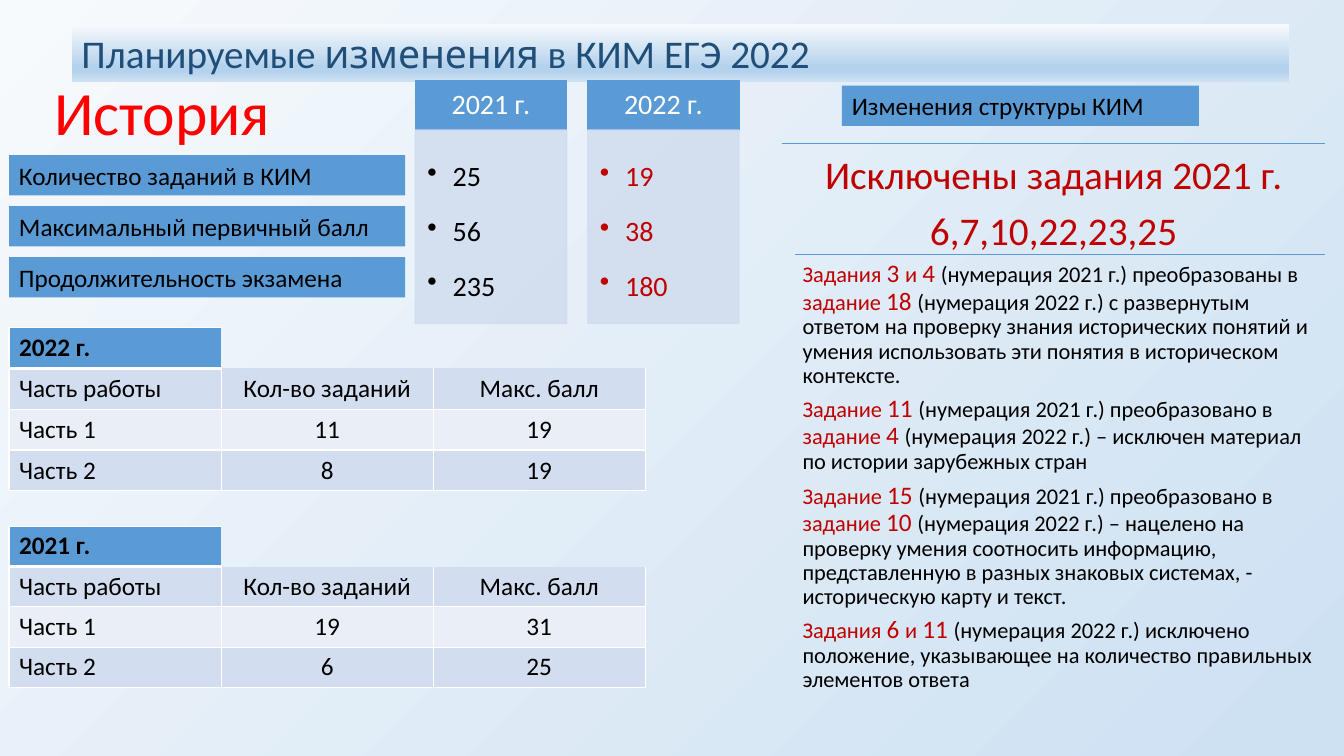
"""Build the slide on planned changes to the 2022 history exam."""
from copy import deepcopy

from lxml import etree
from pptx import Presentation
from pptx.dml.color import RGBColor
from pptx.enum.shapes import MSO_CONNECTOR, MSO_SHAPE
from pptx.enum.text import MSO_ANCHOR, PP_ALIGN
from pptx.oxml.ns import qn
from pptx.util import Inches, Pt

RECT = MSO_SHAPE.RECTANGLE
STRAIGHT = MSO_CONNECTOR.STRAIGHT
TOP, MIDDLE = MSO_ANCHOR.TOP, MSO_ANCHOR.MIDDLE
LEFT, CENTER = PP_ALIGN.LEFT, PP_ALIGN.CENTER

COLORS = {name: RGBColor.from_string(code) for name, code in {
    "pale": "F7FAFD", "sky": "CEE1F2", "haze": "B5D2EC", "blue": "5B9BD5",
    "panel": "D2DEEF", "band": "EAEFF7", "navy": "1F4E79", "red": "FF0000",
    "crimson": "C00000", "black": "000000", "white": "FFFFFF"}.items()}
CELL = Inches(0.1)

deck = Presentation()
deck.slide_width, deck.slide_height = Inches(13.33), Inches(7.5)
slide = deck.slides.add_slide(deck.slide_layouts[6])


def paint_gradient(fill, owner, stops, angle):
    fill.gradient()
    fill.gradient_angle = angle
    stop_list = next(owner.iter(qn("a:gsLst")))
    for _ in stops[2:]:
        stop_list.append(deepcopy(stop_list[0]))
    for stop, (position, color) in zip(fill.gradient_stops, stops):
        stop.position = position
        stop.color.rgb = COLORS[color]


def add_block(area, lines, size, fill=None, anchor=TOP, margins=(1, 0.5, 1, 0.5), **layout):
    place = [round(CELL * value) for value in area]
    if fill:
        block = slide.shapes.add_shape(RECT, *place)
        block.shadow.inherit = False
        block.fill.solid()
        block.fill.fore_color.rgb = COLORS[fill]
        block.line.fill.background()
    else:
        block = slide.shapes.add_textbox(*place)
    frame = block.text_frame
    frame.word_wrap = True
    frame.vertical_anchor = anchor
    for side, margin in zip(("left", "top", "right", "bottom"), margins):
        setattr(frame, f"margin_{side}", round(CELL * margin))
    for index, line in enumerate(lines):
        paragraph = frame.add_paragraph() if index else frame.paragraphs[0]
        for key, value in {"alignment": LEFT, **layout}.items():
            setattr(paragraph, key, value)
        for text, color, *changes in line:
            run = paragraph.add_run()
            run.text = text
            run.font.color.rgb = COLORS[color]
            style = {"name": "Calibri", "size": Pt(size), **dict(changes)}
            for key, value in style.items():
                setattr(run.font, key, value)
    return block


paint_gradient(slide.background.fill, slide.element, [(0, "pale"), (0.97, "sky")], 315)

add_block((4.4, 7.5, 31.3, 7.9), [[("История", "red")]], 44, anchor=MIDDLE, line_spacing=0.9)
heading = add_block(
    (7.1, 2.4, 120.8, 5.7),
    [[("Планируемые ", "navy"), ("изменения", "navy", ("name", "Cabin")),
      (" в КИМ ЕГЭ 2022", "navy")]], 28, "haze")
paint_gradient(heading.fill, heading.element,
               [(0, "pale"), (0.74, "haze"), (0.83, "haze"), (1, "sky")], 270)

measures = ["Количество заданий в КИМ", "Максимальный первичный балл", "Продолжительность экзамена"]
for row, measure in enumerate(measures):
    add_block((0.9, 15.4 + 5.05 * row, 39.3, 4), [[(measure, "black")]], 18, "blue")
add_block((83.5, 8.5, 35.4, 4), [[("Изменения структуры КИМ", "black")]], 18, "blue")

years = [("2021 г.", "black", ["25", "56", "235"]), ("2022 г.", "crimson", ["19", "38", "180"])]
for column, (year, color, values) in enumerate(years):
    left = 41.2 + 17.1 * column
    header = add_block((left, 8, 15, 4.9), [[(year, "white")]], 20, "blue", MIDDLE,
                       (1.6, 0.9, 1.6, 0.9), alignment=CENTER, line_spacing=0.9)
    panel = add_block((left, 12.9, 15, 19.2), [[(value, color)] for value in values], 20, "panel",
                      margins=(1.2, 1.2, 1.6, 1.7), line_spacing=1.5, space_after=Pt(3))
    for part, edge in ((header, "blue"), (panel, "panel")):
        part.line.color.rgb = COLORS[edge]
        part.line.width = Pt(1)
    for paragraph in panel.text_frame.paragraphs:
        properties = paragraph._p.get_or_add_pPr()
        properties.set("marL", str(Inches(0.25)))
        properties.set("indent", str(-Inches(0.25)))
        etree.SubElement(properties, qn("a:buChar"), char="•")
    for tone in panel.element.spPr.iter(qn("a:srgbClr")):
        etree.SubElement(tone, qn("a:alpha"), val="90000")

for start, height in ((77.6, 14.2), (78.9, 25.2)):
    ends = [round(CELL * value) for value in (start, height, 131.4, height)]
    rule = slide.shapes.add_connector(STRAIGHT, *ends)
    rule.line.color.rgb = COLORS["blue"]
    rule.line.width = Pt(0.5)
    etree.SubElement(rule.element.spPr, qn("a:effectLst"))

excluded = ["Исключены задания 2021 г.", "6,7,10,22,23,25"]
add_block((77.6, 14.2, 53.8, 13.1), [[(line, "crimson")] for line in excluded], 28,
          margins=[1.2] * 4, alignment=CENTER, line_spacing=0.9, space_after=Pt(9.8))

changes = [
    "Задания 3 и 4|(нумерация 2021 г.) преобразованы в |задание 18|(нумерация 2022 г.) с развернутым "
    "ответом на проверку знания исторических понятий и умения использовать эти понятия в историческом "
    "контексте.",
    "Задание 11|(нумерация 2021 г.) преобразовано в |задание 4|(нумерация 2022 г.) – исключен материал "
    "по истории зарубежных стран",
    "Задание 15|(нумерация 2021 г.) преобразовано в |задание 10|(нумерация 2022 г.) – нацелено на "
    "проверку умения соотносить информацию, представленную в разных знаковых системах, - "
    "историческую карту и текст.",
    "Задания 6 и 11|(нумерация 2022 г.) исключено положение, указывающее на количество правильных "
    "элементов ответа"]
change_lines = []
for change in changes:
    runs = []
    for index, piece in enumerate(change.split("|")):
        if index % 2:
            runs.append((piece, "black"))
        else:
            runs += [(word + " ", "crimson", ("size", Pt(18 if word.isdigit() else 16)))
                     for word in piece.split()]
    change_lines.append(runs)
add_block((78.9, 25.2, 52.6, 49.8), change_lines, 16, margins=[0.7] * 4,
          line_spacing=0.9, space_after=Pt(5.6))

parts = [("2022 г.", 32.5, 16.2, ("11", "19"), ("8", "19")),
         ("2021 г.", 52.2, 16, ("19", "31"), ("6", "25"))]
for year, top, height, first, second in parts:
    rows = [(year, "", ""), ("Часть работы", "Кол-во заданий", "Макс. балл"),
            ("Часть 1", *first), ("Часть 2", *second)]
    place = [round(CELL * value) for value in (0.9, top, 63.1, height)]
    table = slide.shapes.add_table(len(rows), 3, *place).table
    table.first_row = table.horz_banding = False
    for row, (texts, fill) in enumerate(zip(rows, ("blue", "panel", "band", "panel"))):
        for column, text in enumerate(texts):
            cell = table.cell(row, column)
            cell.margin_top = cell.margin_bottom = round(CELL * 0.4)
            cell.vertical_anchor = MIDDLE
            if text:
                cell.fill.solid()
                cell.fill.fore_color.rgb = COLORS[fill]
            else:
                cell.fill.background()
            paragraph = cell.text_frame.paragraphs[0]
            paragraph.alignment = CENTER if column else LEFT
            if text:
                run = paragraph.add_run()
                run.text = text
                style = {"name": "Calibri", "size": Pt(18), "bold": row == 0}
                for key, value in style.items():
                    setattr(run.font, key, value)
                run.font.color.rgb = COLORS["black"]
            for order, side in enumerate("LRTB"):
                width = 3 if (row, column, side) in ((0, 0, "B"), (1, 0, "T")) else 1
                border = etree.Element(qn(f"a:ln{side}"), w=str(Pt(width)))
                bare = not text or (row == 0 and side == "R") or (row == 1 and column and side == "T")
                if bare:
                    etree.SubElement(border, qn("a:noFill"))
                else:
                    paint = etree.SubElement(border, qn("a:solidFill"))
                    etree.SubElement(paint, qn("a:srgbClr"), val=str(COLORS["white"]))
                cell._tc.get_or_add_tcPr().insert(order, border)

deck.save("out.pptx")
